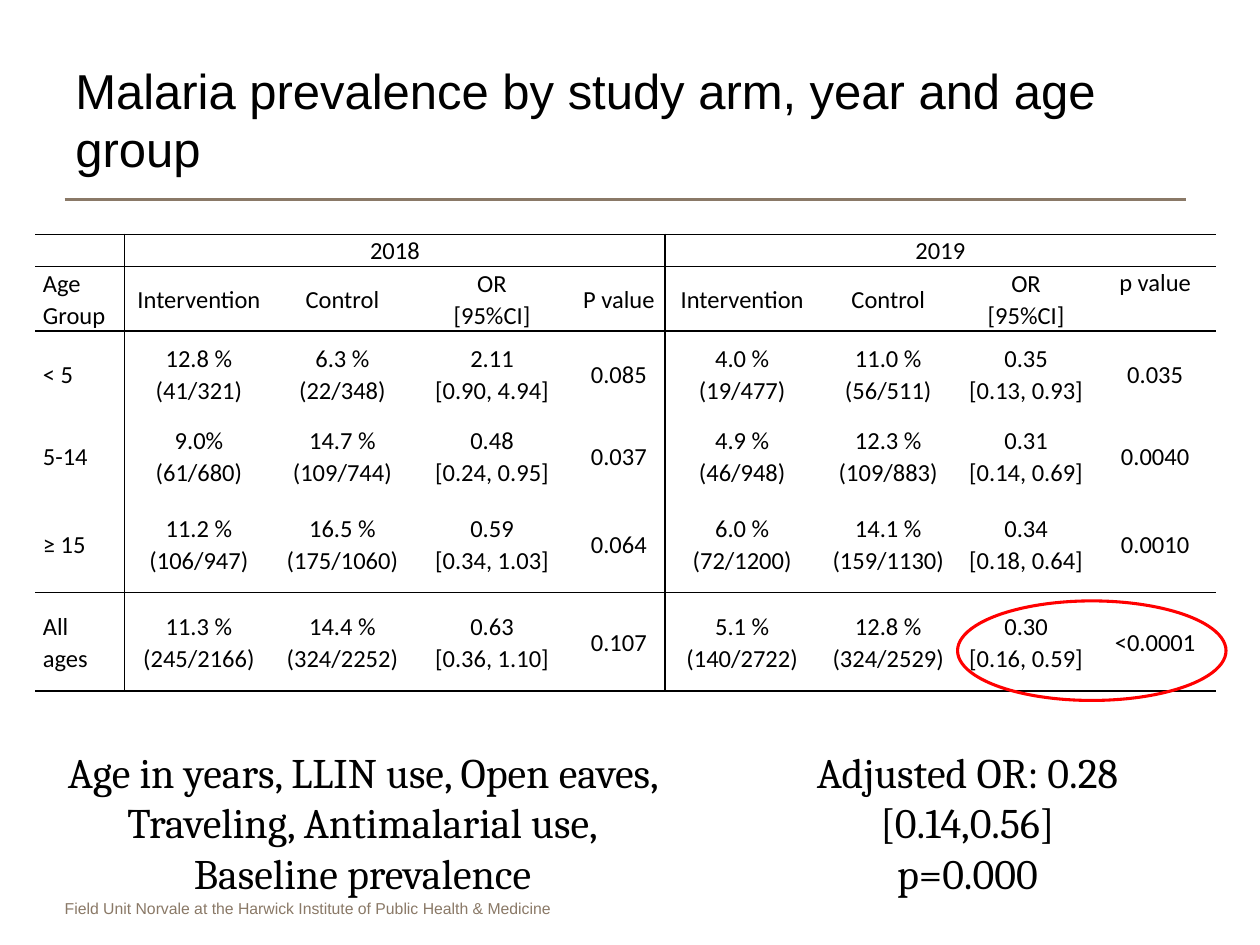
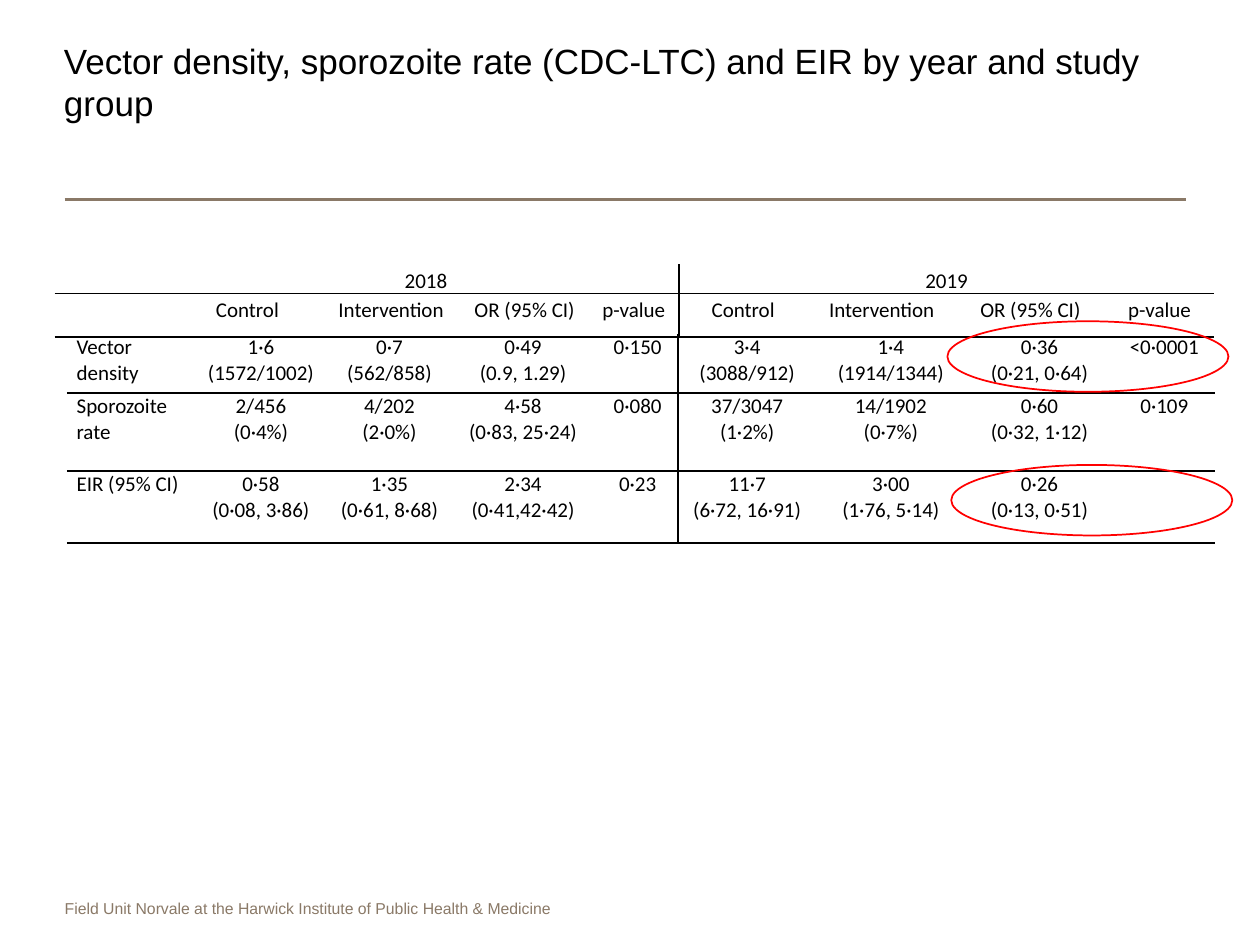
from dataclasses import dataclass
from typing import Any

from lxml import etree
from pptx import Presentation
from pptx.dml.color import RGBColor
from pptx.enum.shapes import MSO_CONNECTOR, MSO_SHAPE
from pptx.enum.text import MSO_ANCHOR, PP_ALIGN
from pptx.oxml.ns import qn
from pptx.util import Pt

LEFT, CENTER = PP_ALIGN.LEFT, PP_ALIGN.CENTER
TOP, MIDDLE, BOTTOM = MSO_ANCHOR.TOP, MSO_ANCHOR.MIDDLE, MSO_ANCHOR.BOTTOM
STRAIGHT, OVAL = MSO_CONNECTOR.STRAIGHT, MSO_SHAPE.OVAL

BLACK, RED, TAUPE = "000000", "FF0000", "8A7967"
FOOTER = "Field Unit Norvale at the Harwick Institute of Public Health & Medicine"
YEAR_COLUMNS = (1, 5)
YEAR_SPAN = 4


@dataclass(frozen=True)
class Box:
    left: float
    top: float
    width: float
    height: float

    def lengths(self) -> tuple:
        return Pt(self.left), Pt(self.top), Pt(self.width), Pt(self.height)


@dataclass(frozen=True)
class TextStyle:
    font: str
    size: float
    color: str = BLACK
    align: Any = LEFT
    anchor: Any = TOP
    spacing: float = 1.0
    margin_x: float = 7.2
    margin_y: float = 3.6


@dataclass(frozen=True)
class TextItem:
    text: str
    box: Box
    style: TextStyle


@dataclass(frozen=True)
class Highlight:
    box: Box
    weight: float


@dataclass(frozen=True)
class Grid:
    """A ruled table; lines_below and lines_right hold row and column indexes, -1 the outer edge."""
    left: float
    top: float
    columns: tuple
    rows: tuple
    cells: tuple
    style: TextStyle
    lines_below: tuple
    lines_right: tuple
    has_years: bool
    anchors: dict


FOOTER_STYLE = TextStyle("Arial", 9, TAUPE, margin_x=0)
NOTE_STYLE = TextStyle("Cambria", 24, align=CENTER)
PREVALENCE_STYLE = TextStyle("Calibri", 14, align=CENTER, anchor=MIDDLE,
                             spacing=1.07, margin_x=4.3, margin_y=0)
VECTOR_STYLE = TextStyle("Calibri", 12, align=CENTER, margin_x=5.6, margin_y=0.5)
VECTOR_HEAD_STYLE = TextStyle("Calibri", 12, align=CENTER, spacing=1.15,
                              margin_x=5, margin_y=0)

YEARS = ("", "2018", "", "", "", "2019", "", "", "")

PREVALENCE = Grid(
    20.2, 133.9,
    (51, 85, 79, 92, 53, 88, 79, 78.5, 69),
    (18.3, 37, 49.5, 44, 56, 56.2),
    (
        YEARS,
        ("Age Group", "Intervention", "Control", "OR\n[95%CI]", "P value",
         "Intervention", "Control", "OR\n[95%CI]", "p value"),
        ("< 5", "12.8 %\n(41/321)", "6.3 %\n(22/348)", "2.11\n[0.90, 4.94]", "0.085",
         "4.0 %\n(19/477)", "11.0 %\n(56/511)", "0.35\n[0.13, 0.93]", "0.035"),
        ("5-14", "9.0%\n(61/680)", "14.7 %\n(109/744)", "0.48\n[0.24, 0.95]", "0.037",
         "4.9 %\n(46/948)", "12.3 %\n(109/883)", "0.31\n[0.14, 0.69]", "0.0040"),
        ("≥ 15", "11.2 %\n(106/947)", "16.5 %\n(175/1060)", "0.59\n[0.34, 1.03]", "0.064",
         "6.0 %\n(72/1200)", "14.1 %\n(159/1130)", "0.34\n[0.18, 0.64]", "0.0010"),
        ("All ages", "11.3 %\n(245/2166)", "14.4 %\n(324/2252)", "0.63\n[0.36, 1.10]", "0.107",
         "5.1 %\n(140/2722)", "12.8 %\n(324/2529)", "0.30\n[0.16, 0.59]", "<0.0001"),
    ),
    PREVALENCE_STYLE, (-1, 0, 1, 4, 5), (0, 4), True,
    {(0, 1): BOTTOM, (0, 5): BOTTOM, (1, 8): TOP},
)

VECTOR_BODY = Grid(
    38.2, 190.8,
    (71.3, 79.2, 67.7, 85, 46, 79.2, 85, 85, 57.6),
    (33.8, 44.6, 41),
    (
        ("Vector density", "1·6\n(1572/1002)", "0·7\n(562/858)", "0·49\n(0.9, 1.29)", "0·150",
         "3·4\n(3088/912)", "1·4 (1914/1344)", "0·36\n(0·21, 0·64)", "<0·0001"),
        ("Sporozoite rate", "2/456\n(0·4%)", "4/202\n(2·0%)", "4·58\n(0·83, 25·24)", "0·080",
         "37/3047\n(1·2%)", "14/1902\n(0·7%)", "0·60\n(0·32, 1·12)", "0·109"),
        ("EIR (95% CI)", "0·58\n(0·08, 3·86)", "1·35\n(0·61, 8·68)", "2·34\n(0·41,42·42)", "0·23",
         "11·7\n(6·72, 16·91)", "3·00\n(1·76, 5·14)", "0·26\n(0·13, 0·51)", ""),
    ),
    VECTOR_STYLE, (0, 1, 2), (4,), False, {},
)

VECTOR_HEAD = Grid(
    31.2, 151,
    (67.7, 85, 79.2, 73.4, 51.5, 73.4, 85, 85, 62.6),
    (16.8, 24.8),
    (YEARS, ("",) + ("Control", "Intervention", "OR (95% CI)", "p-value") * 2),
    VECTOR_HEAD_STYLE, (0, 1), (4,), True, {},
)


def rgb(color: str) -> RGBColor:
    return RGBColor.from_string(color)


def apply_format(target: Any, values: dict) -> None:
    for name, value in values.items():
        setattr(target, name, value)


def write_text(text_frame: Any, text: str, style: TextStyle) -> None:
    """Write one paragraph per line of text."""
    text_frame.word_wrap = True
    for index, line in enumerate(text.split("\n")):
        paragraph = text_frame.add_paragraph() if index else text_frame.paragraphs[0]
        apply_format(paragraph, {"alignment": style.align, "line_spacing": style.spacing})
        if not line:
            etree.SubElement(paragraph._p, qn("a:endParaRPr"), sz=str(int(style.size * 100)))
            continue
        run = paragraph.add_run()
        run.text = line
        apply_format(run.font, {"name": style.font, "size": Pt(style.size)})
        run.font.color.rgb = rgb(style.color)


def margins(style: TextStyle) -> dict:
    return {"margin_left": Pt(style.margin_x), "margin_right": Pt(style.margin_x),
            "margin_top": Pt(style.margin_y), "margin_bottom": Pt(style.margin_y)}


def add_text(slide: Any, item: TextItem) -> None:
    text_frame = slide.shapes.add_textbox(*item.box.lengths()).text_frame
    apply_format(text_frame, {**margins(item.style), "vertical_anchor": item.style.anchor})
    write_text(text_frame, item.text, item.style)


def set_borders(cell: Any, sides: dict) -> None:
    """Draw a 1 pt black line on each true side and none on the others."""
    properties = cell._tc.get_or_add_tcPr()
    for side, visible in sides.items():
        line = etree.SubElement(properties, qn(f"a:ln{side}"), w=str(Pt(1)))
        if visible:
            fill = etree.SubElement(line, qn("a:solidFill"))
            etree.SubElement(fill, qn("a:srgbClr"), val=BLACK)
        else:
            etree.SubElement(line, qn("a:noFill"))


def add_grid(slide: Any, grid: Grid) -> None:
    box = Box(grid.left, grid.top, sum(grid.columns), sum(grid.rows))
    table = slide.shapes.add_table(len(grid.rows), len(grid.columns), *box.lengths()).table
    apply_format(table, {"first_row": False, "horz_banding": False})
    for column, width in zip(table.columns, grid.columns):
        column.width = Pt(width)
    for row, height in zip(table.rows, grid.rows):
        row.height = Pt(height)
    if grid.has_years:
        for start in YEAR_COLUMNS:
            table.cell(0, start).merge(table.cell(0, start + YEAR_SPAN - 1))
    for row_index, texts in enumerate(grid.cells):
        for column_index, text in enumerate(texts):
            cell = table.cell(row_index, column_index)
            anchor = grid.anchors.get((row_index, column_index), grid.style.anchor)
            apply_format(cell, {**margins(grid.style), "vertical_anchor": anchor})
            set_borders(cell, {
                "L": column_index - 1 in grid.lines_right,
                "R": column_index in grid.lines_right,
                "T": row_index - 1 in grid.lines_below,
                "B": row_index in grid.lines_below,
            })
            cell.fill.background()
            write_text(cell.text_frame, text, grid.style)
            if column_index == 0:
                cell.text_frame.paragraphs[0].alignment = LEFT


def add_highlight(slide: Any, highlight: Highlight) -> None:
    ellipse = slide.shapes.add_shape(OVAL, *highlight.box.lengths())
    ellipse.shadow.inherit = False
    ellipse.fill.background()
    ellipse.line.color.rgb = rgb(RED)
    ellipse.line.width = Pt(highlight.weight)


def add_base_slide(presentation: Any, title: str, title_box: Box, title_size: float) -> Any:
    """Add a slide with the shared rule, footer and title."""
    slide = presentation.slides.add_slide(presentation.slide_layouts[6])
    rule = slide.shapes.add_connector(STRAIGHT, Pt(37), Pt(114), Pt(677.5), Pt(114))
    rule.line.color.rgb = rgb(TAUPE)
    rule.line.width = Pt(1.5)
    etree.SubElement(rule._element.spPr, qn("a:effectLst"))
    add_text(slide, TextItem(FOOTER, Box(37, 510, 389, 18), FOOTER_STYLE))
    add_text(slide, TextItem(title, title_box, TextStyle("Arial", title_size, anchor=MIDDLE)))
    return slide


def add_prevalence_slide(presentation: Any) -> None:
    slide = add_base_slide(presentation, "Malaria prevalence by study arm, year and age group",
                           Box(36, 36, 642, 64), 28)
    add_grid(slide, PREVALENCE)
    notes = (
        TextItem("Age in years, LLIN use, Open eaves, Traveling, Antimalarial use,\n"
                 "Baseline prevalence", Box(20, 423, 374.4, 94.3), NOTE_STYLE),
        TextItem("Adjusted OR: 0.28 [0.14,0.56]\np=0.000",
                 Box(411, 423, 283.7, 94.3), NOTE_STYLE),
    )
    for note in notes:
        add_text(slide, note)
    add_highlight(slide, Highlight(Box(547.2, 343.4, 153.4, 56.9), 1.75))


def add_vector_slide(presentation: Any) -> None:
    slide = add_base_slide(
        presentation, "Vector density, sporozoite rate (CDC-LTC) and EIR by year and study group",
        Box(29.5, 26, 642, 41), 20)
    for grid in (VECTOR_BODY, VECTOR_HEAD):
        add_grid(slide, grid)
    for left, top in ((541.4, 183.6), (543.6, 265.7)):
        add_highlight(slide, Highlight(Box(left, top, 160.6, 40.3), 1))


def main() -> None:
    presentation = Presentation()
    apply_format(presentation, {"slide_width": Pt(720), "slide_height": Pt(540)})
    add_prevalence_slide(presentation)
    add_vector_slide(presentation)
    presentation.save("out.pptx")


if __name__ == "__main__":
    main()
